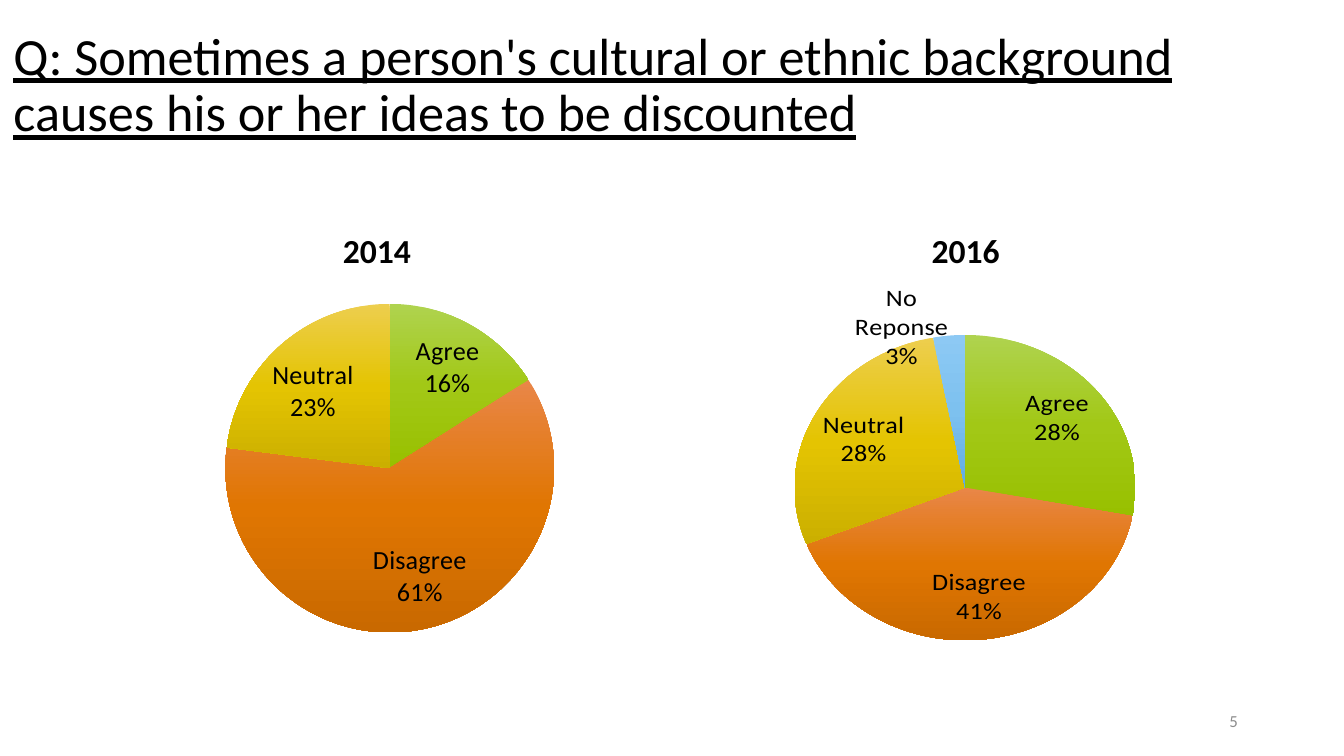
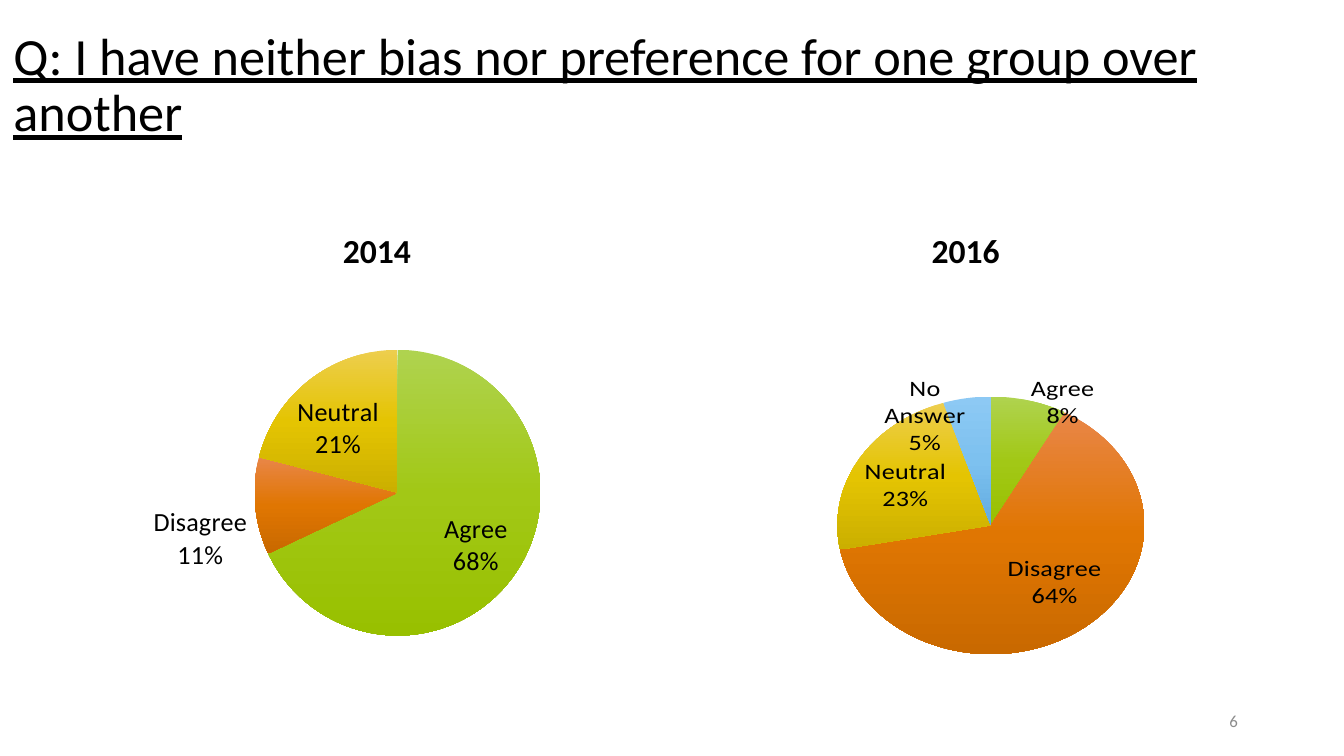
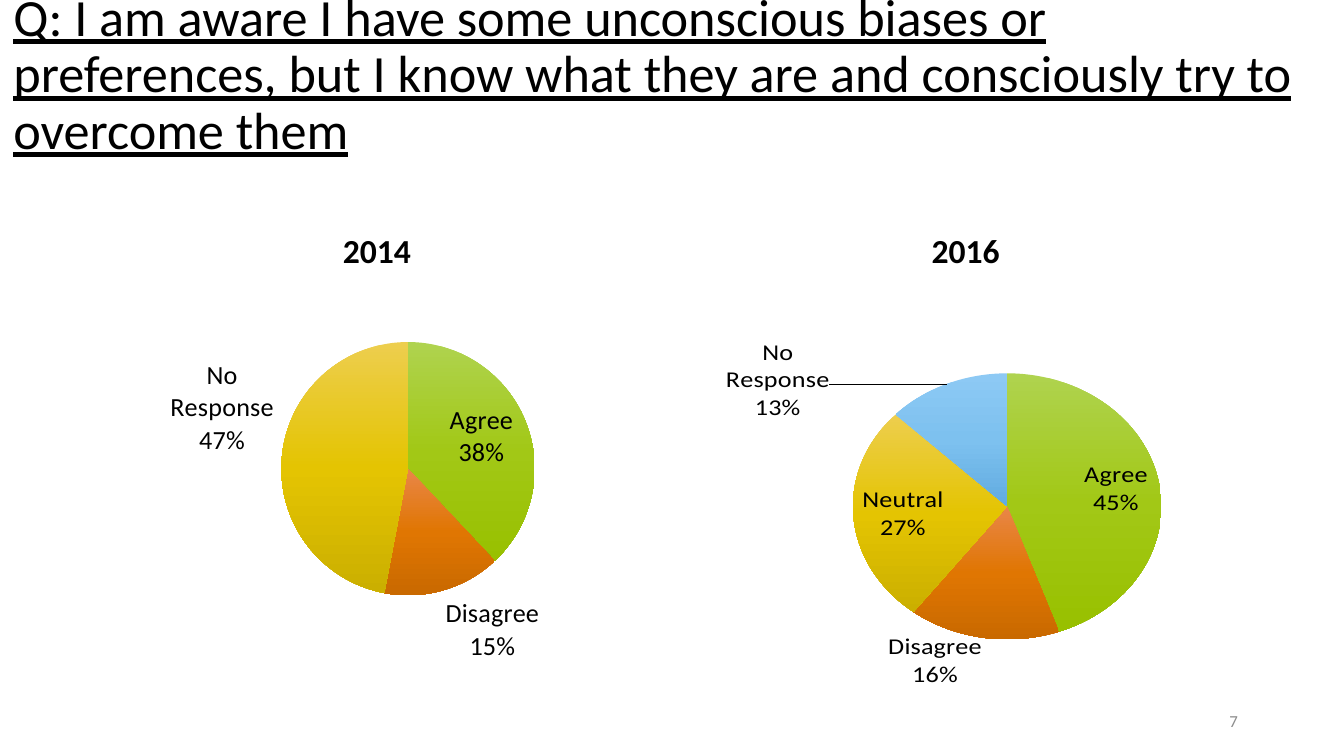
from copy import deepcopy

from pptx import Presentation
from pptx.chart.data import CategoryChartData
from pptx.dml.color import RGBColor
from pptx.enum.chart import XL_CHART_TYPE, XL_LABEL_POSITION
from pptx.enum.text import MSO_ANCHOR, MSO_AUTO_SIZE, PP_ALIGN
from pptx.oxml import parse_xml
from pptx.oxml.ns import nsdecls, qn
from pptx.oxml.xmlchemy import OxmlElement
from pptx.util import Pt

PIE = XL_CHART_TYPE.PIE
BEST = XL_LABEL_POSITION.BEST_FIT
LEFT, MID, RIGHT = PP_ALIGN.LEFT, PP_ALIGN.CENTER, PP_ALIGN.RIGHT
CENTER, BOTTOM = MSO_ANCHOR.MIDDLE, MSO_ANCHOR.BOTTOM
FIXED = MSO_AUTO_SIZE.NONE

FONT = "Calibri"
COLORS = {"ink": "000000", "gray": "8C8C8C", "paper": "FFFFFF"}
SLICES = [
    ("AFD34F", "A2C816", "98C000"),
    ("E98648", "E07602", "C96900"),
    ("EDCE4E", "E4C402", "CBAF00"),
    ("8DC9F4", "7DC1EF", "61ABE0"),
]
YEARS = {"2014": (49.7, 304.6), "2016": (364.3, 306)}
SIZE = {"2014": (306, 217.4), "2016": (304.6, 217.4)}

SURVEY = [
    {
        "title": "Q: Sometimes a person's cultural or ethnic background causes "
                 "his or her ideas to be discounted",
        "box": (0, 7.2, 706.3, 78.5),
        "pies": [
            {"year": "2014", "at": (49.7, 147.6), "plot": (0.23, 0.07, 0.58, 0.81),
             "data": {"Agree": 16, "Disagree": 61, "Neutral": 23, "No Response": None}},
            {"year": "2016", "at": (383, 129.6), "plot": (0.14, 0.14, 0.6, 0.84),
             "data": {"Agree": 28, "Disagree": 41, "Neutral": 28, "No Reponse": 3}},
        ],
    },
    {
        "title": "Q: I have neither bias nor preference for one group over another",
        "box": (0, 7.2, 710.6, 78.5),
        "pies": [
            {"year": "2014", "at": (48.2, 149),
             "data": {"Agree": 68, "Disagree": 11, "Neutral": 21}},
            {"year": "2016", "at": (354.2, 166.3), "plot": (0.31, 0.06, 0.54, 0.76),
             "data": {"Agree": 8, "Disagree": 64, "Neutral": 23, "No Answer": 5}},
        ],
    },
    {
        "title": "Q: I am aware I have some unconscious biases or preferences, "
                 "but I know what they are and consciously try to overcome them",
        "box": (0, 1.4, 707, 78.5),
        "pies": [
            {"year": "2014", "at": (49.7, 148.3),
             "data": {"Agree": 38, "Disagree": 15, "No Response": 47}},
            {"year": "2016", "at": (376.6, 157.7), "plot": (0.26, 0.1, 0.55, 0.76),
             "data": {"Agree": 45, "Disagree": 16, "Neutral": 27, "No Response": 13},
             "shift": (3, -0.2, 0.03)},
        ],
    },
]


def layout(**vals):
    tags = "".join(f'<c:{k} val="{v}"/>' for k, v in vals.items())
    return parse_xml(f'<c:layout {nsdecls("c")}><c:manualLayout>{tags}'
                     '</c:manualLayout></c:layout>')


class Deck:
    """Holds the shared style and the current slide."""

    def __init__(self):
        self.prs = Presentation()
        self.prs.slide_width, self.prs.slide_height = Pt(720), Pt(405)
        self.slide = None

    def style(self, font, size, color="ink", bold=False, line=False):
        font.name, font.size = FONT, Pt(size)
        font.bold, font.underline = bold, line
        font.color.rgb = RGBColor.from_string(COLORS[color])

    def fill(self, shape, text, box, size, align, anchor, space=1.0, **look):
        shape.left, shape.top, shape.width, shape.height = map(Pt, box)
        frame = shape.text_frame
        frame.text, frame.word_wrap = text, True
        frame.auto_size, frame.vertical_anchor = FIXED, anchor
        para = frame.paragraphs[0]
        para.alignment, para.line_spacing = align, space
        self.style(para.font, size, **look)

    def start(self, title, box):
        self.slide = self.prs.slides.add_slide(self.prs.slide_layouts[5])
        back = self.slide.background.fill
        back.solid()
        back.fore_color.rgb = RGBColor.from_string(COLORS["paper"])
        self.fill(self.slide.shapes.title, title, box, 28, LEFT, CENTER, 0.9, line=True)

    def text(self, text, box, *args, **look):
        shape = self.slide.shapes.add_textbox(*map(Pt, box))
        self.fill(shape, text, box, *args, **look)

    def pie(self, year, at, data, plot=None, shift=None):
        table = CategoryChartData()
        table.categories = list(data)
        table.add_series("Series 1", list(data.values()))
        frame = self.slide.shapes.add_chart(PIE, *map(Pt, at + SIZE[year]), table)
        chart = frame.chart
        chart.has_title = chart.has_legend = False
        self.style(chart.font, 18)
        chart.plots[0].vary_by_categories = True
        series = chart.plots[0].series[0]
        for i in range(len(data)):
            self.shade(series.points[i].format.fill, SLICES[i])
        for stops in series._element.iter(qn("a:gsLst")):
            self.center(stops)
        self.labels(series, shift)
        if plot:
            area = chart.element.find(".//" + qn("c:plotArea"))
            for old in area.findall(qn("c:layout")):
                area.remove(old)
            x, y, w, h = plot
            area.insert(0, layout(layoutTarget="inner", xMode="edge", yMode="edge",
                                  x=x, y=y, w=w, h=h))

    def shade(self, fill, tones):
        fill.gradient()
        fill.gradient_angle = 270
        for stop, tone in zip(fill.gradient_stops, (tones[0], tones[2])):
            stop.color.rgb = RGBColor.from_string(tone)

    def center(self, stops):
        tones = {light: base for light, base, dark in SLICES}
        mid = deepcopy(stops[0])
        mid.set("pos", "50000")
        mid[0].set("val", tones[mid[0].get("val")])
        stops.insert(1, mid)

    def labels(self, series, shift):
        marks = series.data_labels
        marks.number_format, marks.number_format_is_linked = "0%", False
        marks.show_value = False
        marks.show_percentage = marks.show_category_name = True
        marks.position = BEST
        self.style(marks.font, 14)
        if shift:
            point, x, y = shift
            mark = series.points[point].data_label
            self.style(mark.font, 14)
            mark.position = BEST
            node = series._element.find(".//" + qn("c:dLbl"))
            node.find(qn("c:idx")).addnext(layout(x=x, y=y))
            for tag, val in (("showVal", "0"), ("showCatName", "1"), ("showPercent", "1")):
                node.find(qn("c:" + tag)).set("val", val)
        for flag in list(series._element.iter(qn("c:showBubbleSize"))):
            split = OxmlElement("c:separator")
            split.text = "\n"
            flag.addnext(split)


def main():
    deck = Deck()
    for page, item in enumerate(SURVEY, 5):
        deck.start(item["title"], item["box"])
        for year, (left, width) in YEARS.items():
            deck.text(year, (left, 99.4, width, 49), 18, MID, BOTTOM, 0.9, bold=True)
        for pie in item["pies"]:
            deck.pie(**pie)
        deck.text(str(page), (508.3, 375.1, 162, 21.6), 9, RIGHT, CENTER, color="gray")
    deck.prs.save("out.pptx")


if __name__ == "__main__":
    main()
